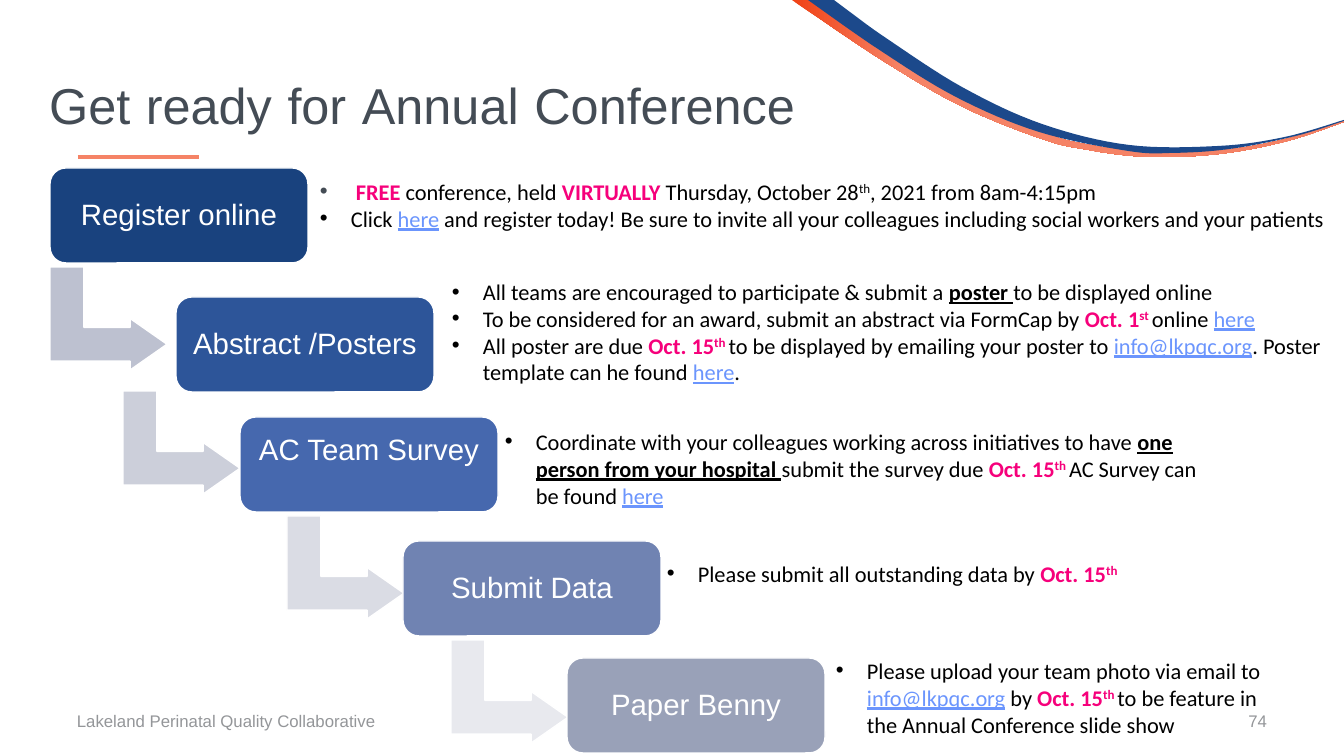
"""Build the conference preparation slide with its staircase of steps."""
import pptx
import pptx.dml.color
import pptx.enum.dml
import pptx.enum.shapes
import pptx.enum.text
import pptx.oxml.ns
import pptx.util
from lxml import etree

SCALE = 12192000 / 1344
COLORS = {
    "orange": "F58366", "deep orange": "F04115", "blue": "1C498B", "white": "FFFFFF",
    "title": "444C55", "footer": "949699", "black": "000000", "pink": "F6007B", "link": "6B95FD",
}
ALIGN = pptx.enum.text.PP_ALIGN
ANCHOR = pptx.enum.text.MSO_ANCHOR
SHAPE = pptx.enum.shapes.MSO_SHAPE

STYLES = {
    "plain": {"color": "black"},
    "lead": {"color": "title", "bold": True},
    "strong": {"color": "black", "bold": True, "underline": True},
    "key": {"color": "pink", "bold": True},
    "key raised": {"color": "pink", "bold": True, "raised": True},
    "raised": {"color": "black", "raised": True},
    "link": {"color": "link", "underline": True},
}
BOX_SIZE = (258, 95)
ARROW_SIZE = (103, 117)
STEPS = [
    {"label": "Register online", "fill": "19427E", "at": (50, 168),
     "arrow": (57, 260), "arrow fill": "BDC1D0", "note": (310, 173, 1033, 92),
     "text": [
         [(" ", "lead"), ("FREE", "key"), (" conference, held ", "plain"), ("VIRTUALLY", "key"),
          (" Thursday, October 28", "plain"), ("th", "raised"), (", 2021 from 8am-4:15pm", "plain")],
         [("Click ", "plain"), ("here", "link"),
          (" and register today! Be sure to invite all your colleagues including "
           "social workers and your patients", "plain")]]},
    {"label": "Abstract /Posters", "fill": "2D5599", "at": (176, 297),
     "arrow": (130, 384), "arrow fill": "CCCFDA", "note": (442, 273, 902, 146),
     "text": [
         [("All teams are encouraged to participate & submit a ", "plain"), ("poster ", "strong"),
          ("to be displayed online", "plain")],
         [("To be considered for an award, submit an abstract via FormCap by ", "plain"),
          ("Oct. 1", "key"), ("st ", "key raised"), ("online ", "plain"), ("here", "link")],
         [("All poster are due ", "plain"), ("Oct. 15", "key"), ("th ", "key raised"),
          ("to be displayed by emailing your poster to ", "plain"), ("info@lkpqc.org", "link"),
          (". Poster template can he found ", "plain"), ("here", "link"), (".", "plain")]]},
    {"label": "AC Team Survey", "fill": "4668AE", "at": (240, 417), "lift": 28,
     "arrow": (294, 509), "arrow fill": "DADCE4", "note": (495, 423, 739, 92),
     "text": [
         [("Coordinate with your colleagues working across initiatives to have ", "plain"),
          ("one person from your hospital ", "strong"), ("submit the survey due ", "plain"),
          ("Oct. 15", "key"), ("th ", "key raised"), ("AC Survey can be found ", "plain"),
          ("here", "link")]]},
    {"label": "Submit Data", "fill": "7083B2", "at": (403, 541),
     "arrow": (458, 633), "arrow fill": "E8E9EE", "note": (657, 555, 521, 37),
     "text": [
         [("Please submit all outstanding data by ", "plain"), ("Oct. 15", "key"),
          ("th", "key raised")]]},
    {"label": "Paper Benny", "fill": "99A1B8", "at": (567, 658), "note": (826, 652, 455, 92),
     "text": [
         [("Please upload your team photo via email to ", "plain"), ("info@lkpqc.org", "link"),
          (" by ", "plain"), ("Oct. 15", "key"), ("th ", "key raised"),
          ("to be feature in the Annual Conference slide show", "plain")]]},
]
ORANGE_EDGES = (
    [(811, 0), (841, 21), (889, 54), (966, 100), (1047, 134), (1090, 145), (1134, 151),
     (1177, 153), (1233, 149), (1290, 138), (1344, 121)],
    [(1344, 122), (1291, 140), (1234, 152), (1178, 157), (1133, 156), (1089, 150), (1045, 140),
     (963, 107), (885, 62), (810, 12), (792, 0)],
)
BLUE_EDGES = (
    [(834, 0), (850, 12), (886, 38), (962, 87), (1042, 124), (1129, 145), (1219, 146),
     (1285, 137), (1344, 120)],
    [(1344, 121), (1296, 136), (1230, 149), (1173, 153), (1128, 151), (1039, 132), (956, 97),
     (878, 49), (808, 0)],
)


def px(length):
    """Turn px into EMU."""
    return pptx.util.Emu(round(length * SCALE))


def rgb(color):
    """Return the colour for a name in the palette or a hex string."""
    return pptx.dml.color.RGBColor.from_string(COLORS.get(color, color))


def apply(target, values):
    """Set each attribute of the target from a dict."""
    for name, value in values.items():
        setattr(target, name, value)


def add_run(paragraph, text, font, size, color, raised=False, **values):
    """Add one formatted run to a paragraph."""
    run = paragraph.add_run()
    run.text = text
    apply(run.font, {"name": font, "size": pptx.util.Pt(size), **values})
    run.font.color.rgb = rgb(color)
    if raised:
        run.font._element.set("baseline", "30000")


def add_text_frame(slide, box):
    """Add a wrapping text box and return its frame."""
    frame = slide.shapes.add_textbox(*map(px, box)).text_frame
    frame.word_wrap = True
    return frame


def smooth(points, steps=8):
    """Return points along a smooth curve through the given ones."""
    padded = [points[0], *points, points[-1]]
    curve = [points[0]]
    for a, b, c, d in zip(padded, padded[1:], padded[2:], padded[3:]):
        for step in range(1, steps + 1):
            t = step / steps
            curve.append(tuple(
                b[i] + t * ((c[i] - a[i]) + t * ((2 * a[i] - 5 * b[i] + 4 * c[i] - d[i])
                            + t * (3 * (b[i] - c[i]) + d[i] - a[i]))) / 2 for i in (0, 1)))
    return curve


def add_ribbon(slide, edges):
    """Draw a ribbon between two curved edges."""
    points = [(px(x), px(y)) for edge in edges for x, y in smooth(edge)]
    builder = slide.shapes.build_freeform(*points[0])
    builder.add_line_segments(points[1:], close=True)
    ribbon = builder.convert_to_shape()
    ribbon.shadow.inherit = False
    ribbon.line.fill.background()
    return ribbon


def add_decoration(slide):
    """Draw both ribbons and the rule below the title."""
    fill = add_ribbon(slide, ORANGE_EDGES).fill
    fill.gradient()
    fill.gradient_angle = 0
    for stop, position, color in zip(fill.gradient_stops, (0, 0.2), ("deep orange", "orange")):
        stop.position = position
        stop.color.rgb = rgb(color)
    fill = add_ribbon(slide, BLUE_EDGES).fill
    fill.solid()
    fill.fore_color.rgb = rgb("blue")
    rule = slide.shapes.add_connector(
        pptx.enum.shapes.MSO_CONNECTOR.STRAIGHT, px(78), px(157), px(199), px(157))
    rule.line.color.rgb = rgb("orange")
    rule.line.width = pptx.util.Pt(2.5)
    etree.SubElement(rule._element.spPr, pptx.oxml.ns.qn("a:effectLst"))


def add_title(slide, box, text):
    """Place the title, with slightly wider word gaps."""
    title = slide.shapes.title
    apply(title, dict(zip(("left", "top", "width", "height"), map(px, box))))
    apply(title.text_frame, {"vertical_anchor": ANCHOR.MIDDLE, "word_wrap": True,
                             "auto_size": pptx.enum.text.MSO_AUTO_SIZE.NONE})
    paragraph = title.text_frame.paragraphs[0]
    paragraph.alignment = ALIGN.LEFT
    for index, word in enumerate(text.split()):
        if index:
            add_run(paragraph, " ", "Arial", 40, "title", bold=True)
        add_run(paragraph, word, "Arial", 36, "title")


def add_footer(slide, box, text, alignment):
    """Add one small grey footer text."""
    frame = add_text_frame(slide, box)
    frame.vertical_anchor = ANCHOR.MIDDLE
    frame.paragraphs[0].alignment = alignment
    add_run(frame.paragraphs[0], text, "Arial", 12, "footer")


def add_block(slide, kind, box, color):
    """Add a filled shape with a thin white outline."""
    shape = slide.shapes.add_shape(kind, *map(px, box))
    shape.shadow.inherit = False
    shape.fill.solid()
    shape.fill.fore_color.rgb = rgb(color)
    shape.line.color.rgb = rgb("white")
    shape.line.width = pptx.util.Pt(1)
    return shape


def add_note(slide, box, paragraphs):
    """Add the bulleted explanation beside a step."""
    frame = add_text_frame(slide, box)
    for index, runs in enumerate(paragraphs):
        paragraph = frame.add_paragraph() if index else frame.paragraphs[0]
        properties = paragraph._p.get_or_add_pPr()
        properties.set("marL", str(px(31)))
        properties.set("indent", str(px(-31)))
        etree.SubElement(properties, pptx.oxml.ns.qn("a:buFont"), typeface="Arial")
        etree.SubElement(properties, pptx.oxml.ns.qn("a:buChar"), char="•")
        for text, style in runs:
            add_run(paragraph, text, "Calibri", 16, **STYLES[style])


def add_step(slide, step):
    """Draw a step's arrow, labelled box and note."""
    if "arrow" in step:
        arrow = add_block(slide, SHAPE.BENT_UP_ARROW, step["arrow"] + ARROW_SIZE,
                          step["arrow fill"])
        arrow.rotation = 90
        for index, value in enumerate((0.328, 0.25, 0.358)):
            arrow.adjustments[index] = value
    frame = add_block(slide, SHAPE.ROUNDED_RECTANGLE, step["at"] + BOX_SIZE,
                      step["fill"]).text_frame
    apply(frame, {"word_wrap": True, "vertical_anchor": ANCHOR.MIDDLE, "margin_left": px(9),
                  "margin_right": px(9), "margin_top": px(5),
                  "margin_bottom": px(9 + step.get("lift", 0))})
    frame.paragraphs[0].alignment = ALIGN.CENTER
    add_run(frame.paragraphs[0], step["label"], "Arial", 21, "white")
    add_note(slide, step["note"], step["text"])


def main():
    """Build and save the presentation."""
    presentation = pptx.Presentation()
    apply(presentation, {"slide_width": px(1344), "slide_height": px(756)})
    slide = presentation.slides.add_slide(presentation.slide_layouts[5])
    add_decoration(slide)
    add_title(slide, (39, 29, 1210, 146), "Get ready for Annual Conference")
    add_footer(slide, (975, 701, 302, 40), "74", ALIGN.RIGHT)
    add_footer(slide, (67, 701, 454, 40), "Lakeland Perinatal Quality Collaborative", ALIGN.LEFT)
    for step in STEPS:
        add_step(slide, step)
    presentation.save("out.pptx")


if __name__ == "__main__":
    main()
